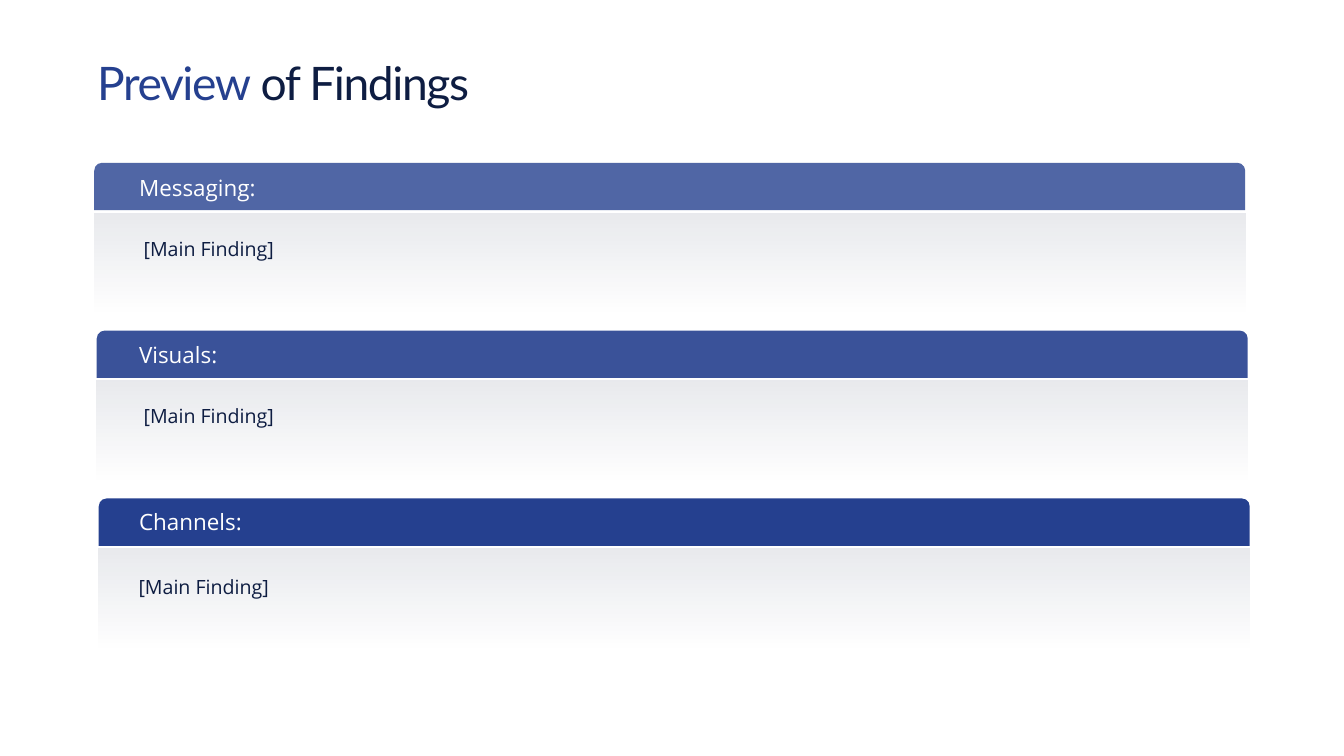
from dataclasses import dataclass

from lxml import etree
from pptx import Presentation
from pptx.dml.color import RGBColor
from pptx.enum import shapes, text
from pptx.oxml.ns import qn
from pptx.util import Inches, Pt


@dataclass(frozen=True)
class Theme:
    blue: str = "25408F"
    navy: str = "0E1D42"
    white: str = "FFFFFF"
    title_font: str = "Lato"
    body_font: str = "Open Sans"
    title_size: int = 66
    label_size: int = 32
    finding_size: int = 28


@dataclass(frozen=True)
class Section:
    label: str
    finding: str
    left: float
    label_top: float
    finding_left: float
    finding_top: float
    opacity: int


THEME = Theme()
SECTIONS = [
    Section("Messaging:", "[Main Finding]", 1.87, 3.41, 2.7, 4.67, 80),
    Section("Visuals:", "[Main Finding]", 1.92, 6.72, 2.7, 7.99, 90),
    Section("Channels:", "[Main Finding]", 1.96, 10.02, 2.6, 11.37, 100),
]
FIRST_TOP, PITCH = 3.23, 3.33
PANEL_WIDTH, HEADER_HEIGHT, BODY_OFFSET, BODY_HEIGHT = 22.84, 0.94, 1.0, 2.05
LABEL_LEFT = 2.7


def set_opacity(element, percents: list[int]) -> None:
    """Give each RGB colour inside the element its opacity, in order."""
    for color, percent in zip(element.iter(qn("a:srgbClr")), percents):
        etree.SubElement(color, qn("a:alpha")).set("val", str(percent * 1000))


def add_panel_shape(slide, kind, left: float, top: float, height: float):
    shape = slide.shapes.add_shape(
        kind, Inches(left), Inches(top), Inches(PANEL_WIDTH), Inches(height))
    shape.shadow.inherit = False
    shape.line.fill.background()
    return shape


def add_header(slide, section: Section, top: float) -> None:
    header = add_panel_shape(slide, shapes.MSO_SHAPE.ROUND_2_SAME_RECTANGLE,
                             section.left, top, HEADER_HEIGHT)
    header.fill.solid()
    header.fill.fore_color.rgb = RGBColor.from_string(THEME.blue)
    if section.opacity < 100:
        set_opacity(header._element.spPr, [section.opacity])


def add_body(slide, section: Section, top: float) -> None:
    """Add the panel that fades out downwards."""
    body = add_panel_shape(slide, shapes.MSO_SHAPE.RECTANGLE,
                           section.left, top, BODY_HEIGHT)
    body.fill.gradient()
    body.fill.gradient_angle = 270
    for stop, position in zip(body.fill.gradient_stops, (0, 1)):
        stop.color.rgb = RGBColor.from_string(THEME.navy)
        stop.position = position
    set_opacity(body._element.spPr, [10, 0])


def add_text(slide, box: tuple, runs: list, font: str, size: int,
             inset: float = 0.06, anchor=text.MSO_ANCHOR.TOP, **paragraph_format):
    """Add one paragraph of (wording, colour) runs and return it."""
    frame = slide.shapes.add_textbox(*map(Inches, box)).text_frame
    frame_format = {"word_wrap": True, "vertical_anchor": anchor}
    for side in ("left", "top", "right", "bottom"):
        frame_format[f"margin_{side}"] = Inches(inset)
    for name, value in frame_format.items():
        setattr(frame, name, value)
    paragraph = frame.paragraphs[0]
    for name, value in paragraph_format.items():
        setattr(paragraph, name, value)
    for wording, color in runs:
        run = paragraph.add_run()
        run.text = wording
        run.font.name = font
        run.font.size = Pt(size)
        run.font.color.rgb = RGBColor.from_string(color)
    return paragraph


def add_title(slide) -> None:
    title = add_text(slide, (1.87, 1.24, 13.03, 1.26),
                     [("Preview ", THEME.blue), ("of Findings", THEME.navy)],
                     THEME.title_font, THEME.title_size, line_spacing=0.8)
    for run in title.runs:
        run.font._element.set("spc", "-200")


def add_section(slide, section: Section, top: float) -> None:
    add_header(slide, section, top)
    add_body(slide, section, top + BODY_OFFSET)
    add_text(slide, (LABEL_LEFT, section.label_top, 5.9, 0.64),
             [(section.label, THEME.white)], THEME.body_font, THEME.label_size,
             anchor=text.MSO_ANCHOR.MIDDLE)
    finding = add_text(
        slide, (section.finding_left, section.finding_top, 6.33, 0.49),
        [(section.finding, THEME.navy)], THEME.body_font, THEME.finding_size,
        inset=0, line_spacing=Pt(36), space_before=Pt(12))
    properties = finding._p.get_or_add_pPr()
    properties.set("marL", "0")
    properties.set("indent", str(Inches(0.15)))


def main() -> None:
    presentation = Presentation()
    presentation.slide_width = Inches(26.67)
    presentation.slide_height = Inches(15)
    slide = presentation.slides.add_slide(presentation.slide_layouts[6])
    add_title(slide)
    for index, section in enumerate(SECTIONS):
        add_section(slide, section, FIRST_TOP + index * PITCH)
    presentation.save("out.pptx")


if __name__ == "__main__":
    main()
